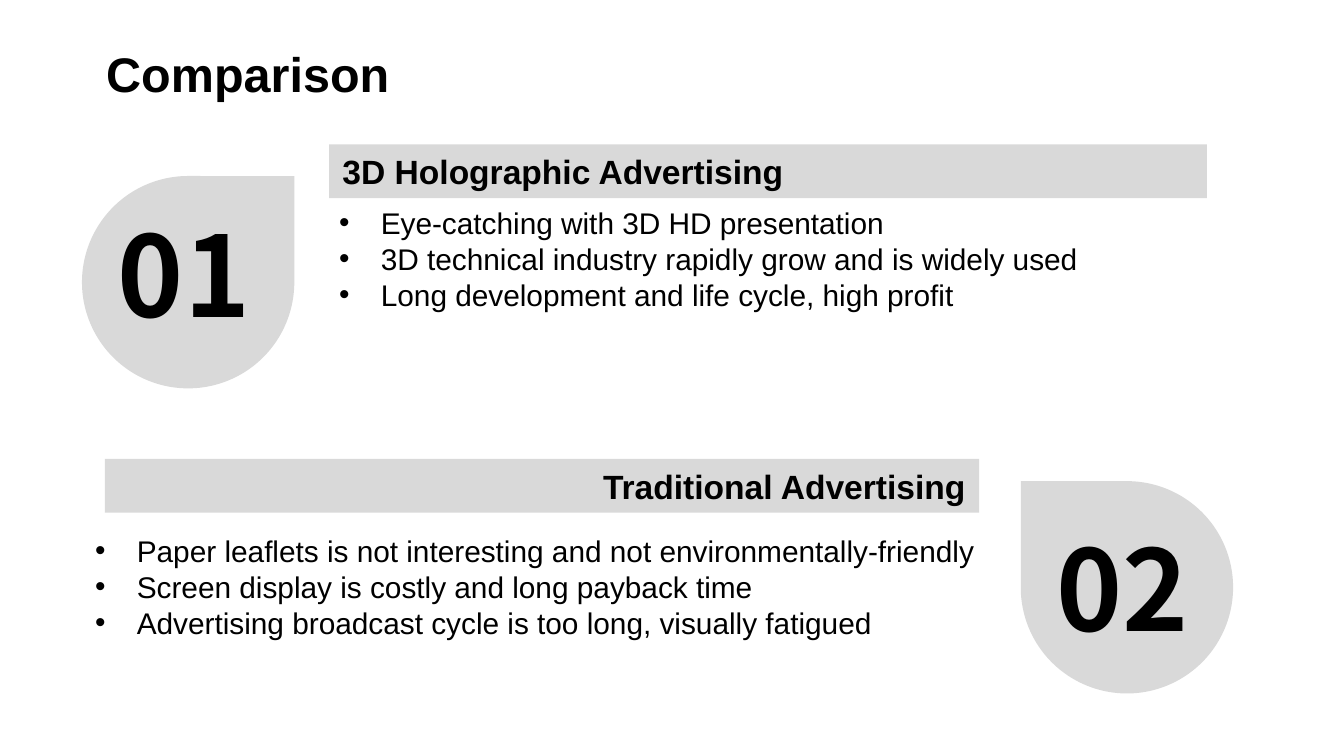
import pptx
import pptx.dml.color
import pptx.enum.shapes
import pptx.enum.text
import pptx.oxml.ns
import pptx.util
from lxml import etree

PX = 4572  # EMU: 200 px to the inch
BLACK, GREY = "000000", "D9D9D9"
BODY_FONT, NUMBER_FONT = "Arial", "Noto Sans CJK SC"
DROP_SIZE = 316
BAR_HEIGHT = 80
BULLET_INDENT = 62

ALIGN = pptx.enum.text.PP_ALIGN
ANCHOR = pptx.enum.text.MSO_ANCHOR
SHAPES = pptx.enum.shapes.MSO_SHAPE


def px(*lengths):
    return [pptx.util.Emu(length * PX) for length in lengths]


def color(hex_text):
    return pptx.dml.color.RGBColor.from_string(hex_text)


def add_bullet(paragraph):
    properties = paragraph._p.get_or_add_pPr()
    indent = BULLET_INDENT * PX
    properties.set("marL", str(indent))
    properties.set("indent", str(-indent))
    for tag, name, value in (("a:buFont", "typeface", BODY_FONT), ("a:buChar", "char", "•")):
        element = etree.SubElement(properties, pptx.oxml.ns.qn(tag))
        element.set(name, value)


def write(shape, *lines, size=16, font=BODY_FONT, bold=False, align=ALIGN.LEFT,
          anchor=ANCHOR.TOP, wrap=True, bullets=False):
    frame = shape.text_frame
    frame.word_wrap = wrap
    frame.vertical_anchor = anchor
    for index, line in enumerate(lines):
        paragraph = frame.add_paragraph() if index else frame.paragraphs[0]
        paragraph.alignment = align
        if bullets:
            add_bullet(paragraph)
        run = paragraph.add_run()
        run.text = line
        run.font.size = pptx.util.Pt(size)
        run.font.name = font
        run.font.bold = bold
        run.font.color.rgb = color(BLACK)


def add_grey_shape(slide, kind, left, top, width, height):
    shape = slide.shapes.add_shape(kind, *px(left, top, width, height))
    shape.shadow.inherit = False
    shape.fill.solid()
    shape.fill.fore_color.rgb = color(GREY)
    shape.line.fill.background()
    return shape


def add_title(slide, text, left, top, width, height):
    title = slide.shapes.title
    title.left, title.top, title.width, title.height = px(left, top, width, height)
    write(title, text, size=26, bold=True)


def add_numbered_drop(slide, number, left, top, rotation, number_top):
    drop = add_grey_shape(slide, SHAPES.TEAR, left, top, DROP_SIZE, DROP_SIZE)
    drop.rotation = rotation
    label = slide.shapes.add_textbox(*px(left + 34, top + number_top, 248, 222))
    write(label, number, size=60, font=NUMBER_FONT, bold=True, wrap=False)


def add_panel(slide, left, top, number, heading, points, drop, bar, body, align):
    """Place drop (x, y, rotation, number y), bar (x, width) and body (x, y, width)."""
    drop_x, drop_y, rotation, number_top = drop
    add_numbered_drop(slide, number, left + drop_x, top + drop_y, rotation, number_top)

    body_x, body_y, body_width = body
    text_box = slide.shapes.add_textbox(*px(left + body_x, top + body_y, body_width, 182))
    write(text_box, *points, align=ALIGN.JUSTIFY, bullets=True)

    bar_x, bar_width = bar
    heading_bar = add_grey_shape(slide, SHAPES.RECTANGLE, left + bar_x, top, bar_width, BAR_HEIGHT)
    write(heading_bar, heading, size=18, bold=True, align=align, anchor=ANCHOR.MIDDLE)


def main():
    presentation = pptx.Presentation()
    presentation.slide_width, presentation.slide_height = px(2000, 1125)
    slide = presentation.slides.add_slide(presentation.slide_layouts[5])

    add_title(slide, "Comparison", 138, 56, 500, 108)
    add_panel(
        slide, 122, 215, "01", "3D Holographic Advertising",
        ["Eye-catching with 3D HD presentation",
         "3D technical industry rapidly grow and is widely used",
         "Long development and life cycle, high profit"],
        drop=(0, 47, 0, 34), bar=(368, 1306), body=(363, 80, 1318), align=ALIGN.LEFT)
    add_panel(
        slide, 122, 683, "02", "Traditional Advertising",
        ["Paper leaflets is not interesting and not environmentally-friendly",
         "Screen display is costly and long payback time",
         "Advertising broadcast cycle is too long, visually fatigued"],
        drop=(1397, 33, 270, 47), bar=(34, 1301), body=(0, 100, 1358), align=ALIGN.RIGHT)

    presentation.save("out.pptx")


if __name__ == "__main__":
    main()
